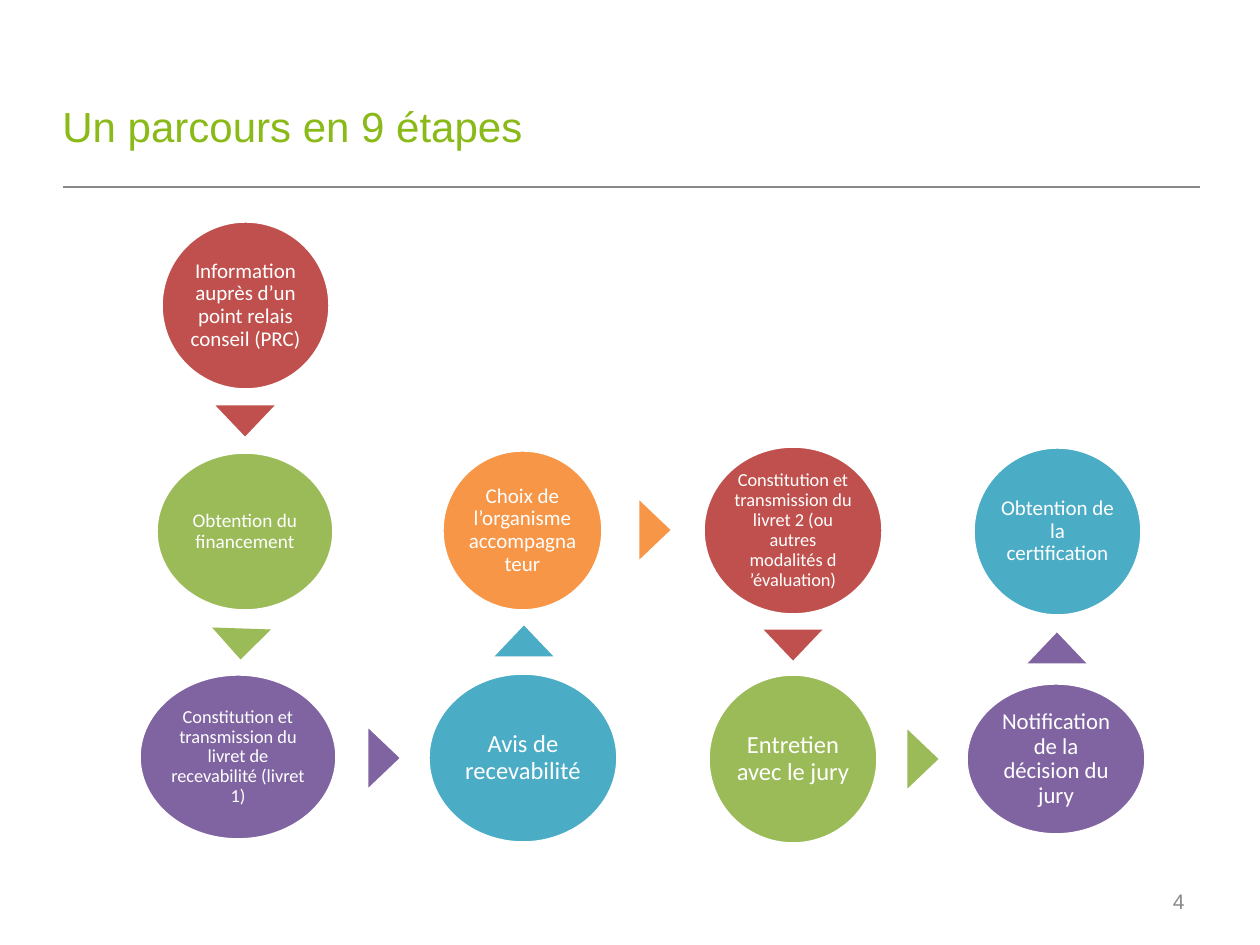
from lxml.etree import SubElement
from pptx import Presentation
from pptx.dml.color import RGBColor
from pptx.enum.shapes import MSO_CONNECTOR, MSO_SHAPE
from pptx.enum.text import MSO_ANCHOR, PP_ALIGN
from pptx.oxml.ns import qn
from pptx.util import Emu, Pt

EMU_PER_PX = 914400 / 126
ARROW_WIDTH, ARROW_HEIGHT = 59, 31
DOWN, RIGHT, UP = 180, 90, 0

COLORS = {
    "title": "89BA17",
    "grey": "898989",
    "white": "FFFFFF",
    "red": "C0504D",
    "green": "9BBB59",
    "purple": "8064A2",
    "blue": "4BACC6",
    "orange": "F79646",
}

# Text, font size, colour, (left, top, width, height)
STEPS = [
    ("Information auprès d’un point relais conseil (PRC)", 12, "red", (161, 221, 169, 169)),
    ("Obtention du financement", 11, "green", (156, 452, 178, 159)),
    ("Constitution et transmission du livret de recevabilité (livret 1)", 10.5, "purple",
     (139, 674, 198, 166)),
    ("Avis de recevabilité", 14, "blue", (428, 673, 190, 170)),
    ("Choix de l’organisme accompagnateur", 12, "orange", (442, 450, 161, 161)),
    ("Constitution et transmission du livret 2 (ou autres modalités d ’évaluation)", 10.5, "red",
     (703, 446, 180, 169)),
    ("Entretien avec le jury", 14, "green", (708, 674, 170, 170)),
    ("Notification de la décision du jury", 13, "purple", (966, 683, 180, 152)),
    ("Obtention de la certification", 12, "blue", (973, 447, 169, 169)),
]

# Centre x, centre y and rotation of the arrow that follows each step but the last
ARROWS = [
    (245, 421, DOWN),
    (241, 644, 181.9),
    (384, 758, RIGHT),
    (524, 641, UP),
    (655, 530, RIGHT),
    (793, 645, DOWN),
    (923, 759, RIGHT),
    (1057, 648, UP),
]


def px(length):
    return Emu(round(length * EMU_PER_PX))


def color(name):
    return RGBColor.from_string(COLORS[name])


def write_text(holder, text, *, size, ink, font="Arial", align=PP_ALIGN.LEFT,
               anchor=MSO_ANCHOR.MIDDLE, inset=None, spacing=None):
    frame = holder.text_frame
    frame.word_wrap = True
    frame.vertical_anchor = anchor
    if inset is not None:
        frame.margin_left = frame.margin_right = px(inset)
        frame.margin_top = frame.margin_bottom = px(inset)
    paragraph = frame.paragraphs[0]
    paragraph.alignment = align
    if spacing is not None:
        paragraph.line_spacing = spacing
    run = paragraph.add_run()
    run.text = text
    run.font.name = font
    run.font.size = Pt(size)
    run.font.color.rgb = color(ink)


def add_label(slide, box, text, **text_format):
    label = slide.shapes.add_textbox(*map(px, box))
    write_text(label, text, **text_format)


def add_filled_shape(slide, preset, box, fill):
    shape = slide.shapes.add_shape(preset, *map(px, box))
    shape.shadow.inherit = False
    shape.fill.solid()
    shape.fill.fore_color.rgb = color(fill)
    return shape


def add_step(slide, text, size, fill, box):
    step = add_filled_shape(slide, MSO_SHAPE.OVAL, box, fill)
    step.line.color.rgb = color("white")
    step.line.width = Pt(2)
    write_text(step, text, size=size, ink="white", font="Calibri",
               align=PP_ALIGN.CENTER, inset=2, spacing=0.9)


def add_arrow(slide, center_x, center_y, rotation, fill):
    box = (center_x - ARROW_WIDTH / 2, center_y - ARROW_HEIGHT / 2, ARROW_WIDTH, ARROW_HEIGHT)
    arrow = add_filled_shape(slide, MSO_SHAPE.ISOSCELES_TRIANGLE, box, fill)
    arrow.line.fill.background()
    arrow.rotation = rotation


def add_rule(slide, left, right, y):
    rule = slide.shapes.add_connector(MSO_CONNECTOR.STRAIGHT, px(left), px(y), px(right), px(y))
    rule.line.color.rgb = color("grey")
    rule.line.width = Pt(1)
    SubElement(rule._element.spPr, qn("a:effectLst"))


def main():
    prs = Presentation()
    prs.slide_width, prs.slide_height = px(1260), px(945)
    slide = prs.slides.add_slide(prs.slide_layouts[6])

    # Title and rule
    add_rule(slide, 63, 1200, 187)
    add_label(slide, (50, 57, 610, 100), "Un parcours en 9 étapes",
              size=24, ink="title", anchor=MSO_ANCHOR.BOTTOM)

    # Steps
    for text, size, fill, box in STEPS:
        add_step(slide, text, size, fill, box)

    # Arrows take the colour of the step they leave
    for (_, _, fill, _), (center_x, center_y, rotation) in zip(STEPS, ARROWS):
        add_arrow(slide, center_x, center_y, rotation, fill)

    # Page number
    add_label(slide, (903, 876, 294, 50), "4", size=12, ink="grey", align=PP_ALIGN.RIGHT)

    prs.save("out.pptx")


if __name__ == "__main__":
    main()
